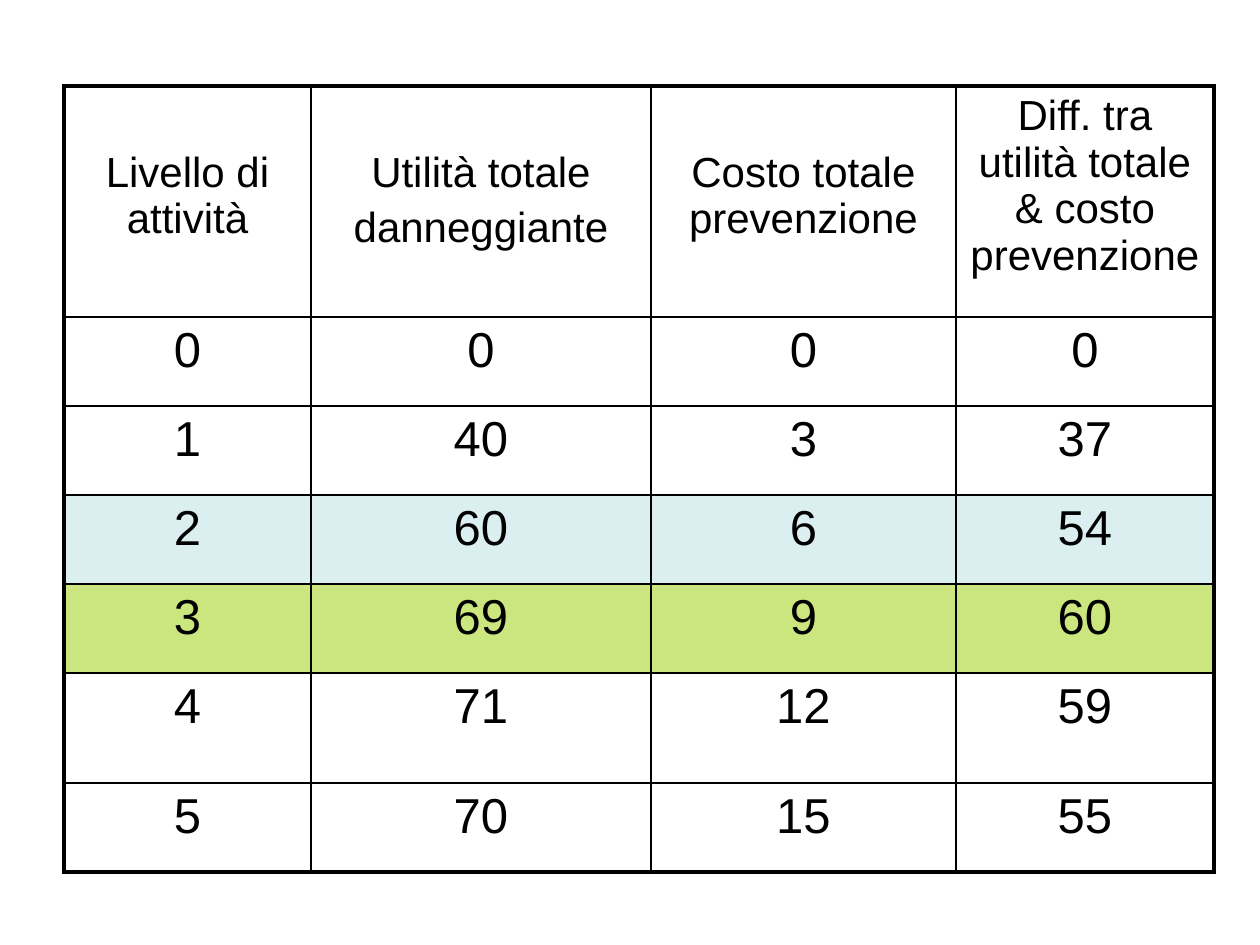
from lxml import etree
from pptx import Presentation
from pptx import util as u
from pptx.dml.color import RGBColor
from pptx.enum import text
from pptx.oxml.ns import qn

HEADERS = [
    ["Livello di attività"],
    ["Utilità totale", "danneggiante"],
    ["Costo totale prevenzione"],
    ["Diff. tra utilità totale & costo prevenzione"],
]
VALUES = [
    (0, 0, 0, 0),
    (1, 40, 3, 37),
    (2, 60, 6, 54),
    (3, 69, 9, 60),
    (4, 71, 12, 59),
    (5, 70, 15, 55),
]
BLACK = RGBColor(0x00, 0x00, 0x00)
PALE_BLUE = RGBColor(0xBB, 0xE0, 0xE3)
GREEN = RGBColor(0x99, 0xCC, 0x00)
HIGHLIGHTS = {3: PALE_BLUE, 4: GREEN}  # table row: fill, half transparent

LEFT, TOP = 64, 86
COLUMN_WIDTHS = [247, 340, 305, 258]
ROW_HEIGHTS = [231, 89, 89, 89, 89, 110, 89]
HEADER_DROP = 63  # top margin of the headers that start one line lower
OUTER, INNER = u.Pt(2.25), u.Pt(1)


def px(count):
    return u.Inches(count / 126)


def set_borders(cell, widths):
    properties = cell._tc.get_or_add_tcPr()
    for side, width in widths.items():
        line = etree.SubElement(properties, qn(f"a:ln{side}"), w=str(int(width)))
        fill = etree.SubElement(line, qn("a:solidFill"))
        etree.SubElement(fill, qn("a:srgbClr"), val=str(BLACK))


def set_fill(cell, color):
    """Fill the cell at half opacity, or leave it clear without a color."""
    if color is None:
        cell.fill.background()
        return
    cell.fill.solid()
    cell.fill.fore_color.rgb = color
    tint = cell._tc.tcPr.find(qn("a:solidFill"))[0]
    etree.SubElement(tint, qn("a:alpha"), val="50000")


def write(cell, lines, size):
    cell.text = "\n".join(lines)
    for index, paragraph in enumerate(cell.text_frame.paragraphs):
        paragraph.alignment = text.PP_ALIGN.CENTER
        if index:
            paragraph.space_before = u.Pt(size * 0.2)
        paragraph.font.name = "Arial"
        paragraph.font.size = u.Pt(size)
        paragraph.font.bold = False
        paragraph.font.color.rgb = BLACK


def main():
    deck = Presentation()
    deck.slide_width, deck.slide_height = u.Inches(10), u.Inches(7.5)
    page = deck.slides.add_slide(deck.slide_layouts[6])

    rows = [HEADERS] + [[[str(value)] for value in row] for row in VALUES]
    last_row, last_column = len(rows) - 1, len(HEADERS) - 1
    table = page.shapes.add_table(
        len(rows), len(HEADERS), px(LEFT), px(TOP),
        px(sum(COLUMN_WIDTHS)), px(sum(ROW_HEIGHTS))).table
    table.first_row = table.horz_banding = False
    for column, width in zip(table.columns, COLUMN_WIDTHS):
        column.width = px(width)
    for row, height in zip(table.rows, ROW_HEIGHTS):
        row.height = px(height)

    for r, row in enumerate(rows):
        for c, lines in enumerate(row):
            cell = table.cell(r, c)
            write(cell, lines, 28 if r else 24)
            if r == 0 and c < last_column:
                cell.margin_top = px(HEADER_DROP)
            set_borders(cell, {
                "L": OUTER if c == 0 else INNER,
                "R": OUTER if c == last_column else INNER,
                "T": OUTER if r == 0 else INNER,
                "B": OUTER if r == last_row else INNER,
            })
            set_fill(cell, HIGHLIGHTS.get(r))

    deck.save("out.pptx")


if __name__ == "__main__":
    main()
